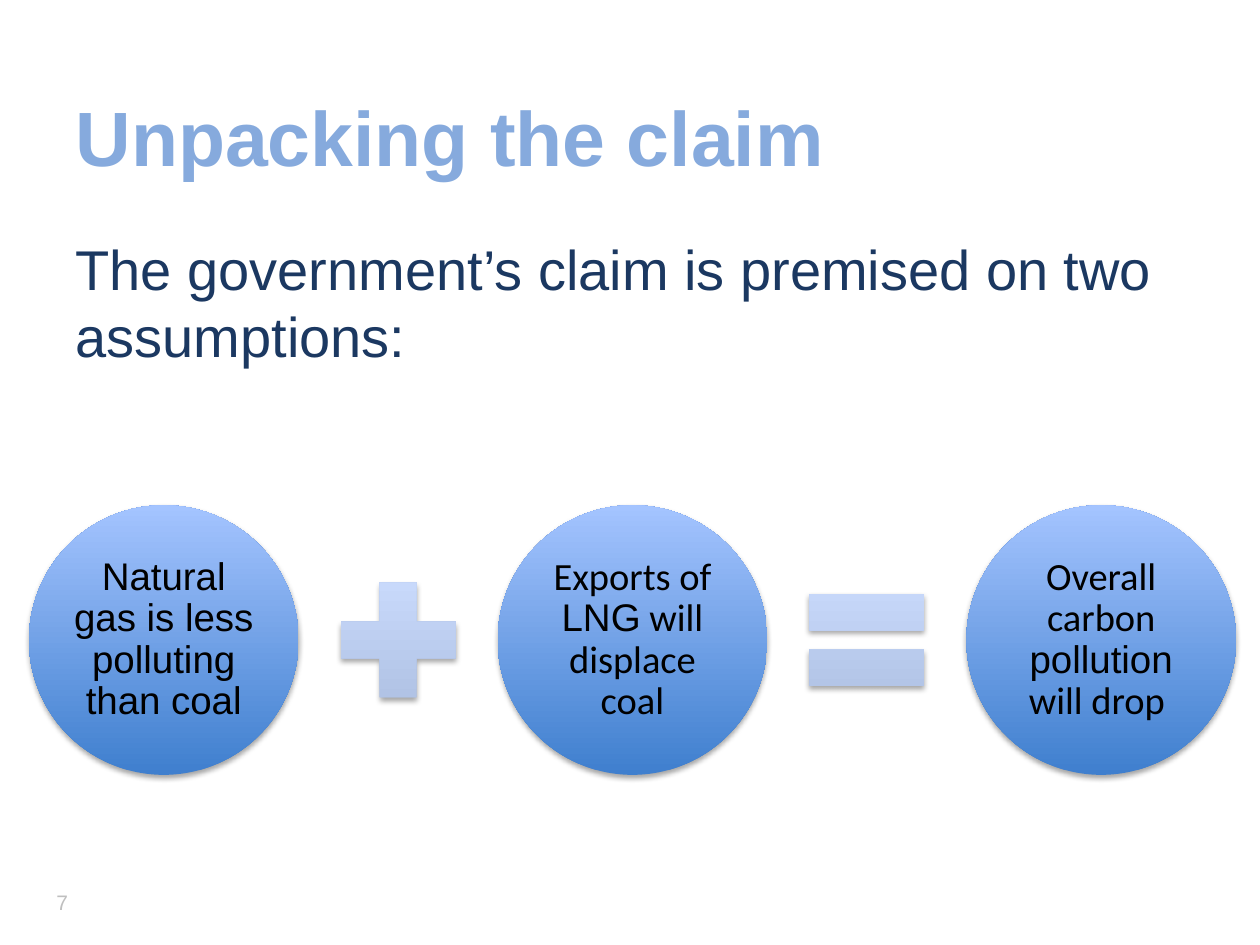
from lxml import etree
from pptx import Presentation
from pptx.dml.color import RGBColor
from pptx.enum import shapes, text
from pptx.oxml import parse_xml
from pptx.oxml.ns import nsdecls, qn
from pptx.util import Inches, Pt

TITLE_BLUE = RGBColor(0x86, 0xAA, 0xDD)
NAVY = RGBColor(0x1B, 0x38, 0x61)
GREY = RGBColor(0xBF, 0xBF, 0xBF)
BLACK = RGBColor(0x00, 0x00, 0x00)
CIRCLE_BLUES = RGBColor(0x3F, 0x7F, 0xCE), RGBColor(0xA4, 0xC4, 0xFF)
SIGN_BLUES = RGBColor(0xAD, 0xBF, 0xE1), RGBColor(0xCC, 0xDD, 0xFF)
SHADOW = (
    f'<a:outerShdw {nsdecls("a")} blurRad="40000" dist="23000" dir="5400000" '
    'rotWithShape="0"><a:srgbClr val="000000"><a:alpha val="35000"/>'
    '</a:srgbClr></a:outerShdw>'
)


def style_font(font, size, color, name="Arial"):
    font.name = name
    font.size = Pt(size)
    font.color.rgb = color


def add_shaded_shape(kind, left, top, size, blues):
    """Add a square-framed shape, dark at the bottom, with a soft shadow."""
    shape = slide.shapes.add_shape(
        kind, Inches(left), Inches(top), Inches(size), Inches(size))
    shape.fill.gradient()
    shape.fill.gradient_angle = 90
    for stop, position, blue in zip(shape.fill.gradient_stops, (0, 1), blues):
        stop.position = position
        stop.color.rgb = blue
    shape.line.fill.background()
    shape.shadow.inherit = False
    shape._element.spPr.find(qn("a:effectLst")).append(parse_xml(SHADOW))
    return shape


prs = Presentation()
prs.slide_width, prs.slide_height = Inches(10), Inches(7.5)
slide = prs.slides.add_slide(prs.slide_layouts[1])

# Title
title = slide.shapes.title
title.left, title.top = Inches(0.5), Inches(0.25)
title.width, title.height = Inches(9), Inches(1.25)
title.text_frame.text = "Unpacking the claim"
title.text_frame.vertical_anchor = text.MSO_ANCHOR.BOTTOM
heading = title.text_frame.paragraphs[0]
heading.alignment = text.PP_ALIGN.LEFT
heading.line_spacing = 0.9
style_font(heading.runs[0].font, 44, TITLE_BLUE)
heading.runs[0].font.bold = True

# Introduction
intro = slide.placeholders[1]
intro.left, intro.top = Inches(0.5), Inches(1.81)
intro.width, intro.height = Inches(9), Inches(1.8)
intro.text_frame.text = "The government’s claim is premised on two assumptions:"
premise = intro.text_frame.paragraphs[0]
premise.space_before = Pt(0)
premise_props = premise._p.get_or_add_pPr()
premise_props.set("marL", "0")
premise_props.set("indent", "0")
etree.SubElement(premise_props, qn("a:buNone"))
style_font(premise.runs[0].font, 32, NAVY)

# Equation: two assumptions and their conclusion
PITCH = 3.72
statements = [
    [("Natural gas is less polluting than coal", "Arial")],
    [("Exports of ", "Calibri"), ("LNG", "Arial"),
     (" will displace coal", "Calibri")],
    [("Overall carbon ", "Calibri"), ("pollution", "Arial"),
     (" will drop ", "Calibri")],
]
signs = [shapes.MSO_SHAPE.MATH_PLUS, shapes.MSO_SHAPE.MATH_EQUAL]

for i, statement in enumerate(statements):
    circle = add_shaded_shape(
        shapes.MSO_SHAPE.OVAL, 0.23 + i * PITCH, 4.01, 2.14, CIRCLE_BLUES)
    frame = circle.text_frame
    frame.word_wrap = True
    frame.vertical_anchor = text.MSO_ANCHOR.MIDDLE
    frame.margin_left = frame.margin_right = Inches(0.03)
    frame.margin_top = frame.margin_bottom = Inches(0.03)
    wording = frame.paragraphs[0]
    wording.alignment = text.PP_ALIGN.CENTER
    wording.line_spacing = 0.9
    for words, font_name in statement:
        run = wording.add_run()
        run.text = words
        style_font(run.font, 22, BLACK, font_name)

for i, sign in enumerate(signs):
    add_shaded_shape(sign, 2.54 + i * PITCH, 4.46, 1.24, SIGN_BLUES)

# Page number
page_number = slide.shapes.add_textbox(
    Inches(0.35), Inches(6.96), Inches(0.54), Inches(0.4))
page_number.text_frame.word_wrap = True
page_number.text_frame.vertical_anchor = text.MSO_ANCHOR.MIDDLE
page_number.text_frame.text = "7"
style_font(page_number.text_frame.paragraphs[0].runs[0].font, 12, GREY)

prs.save("out.pptx")
